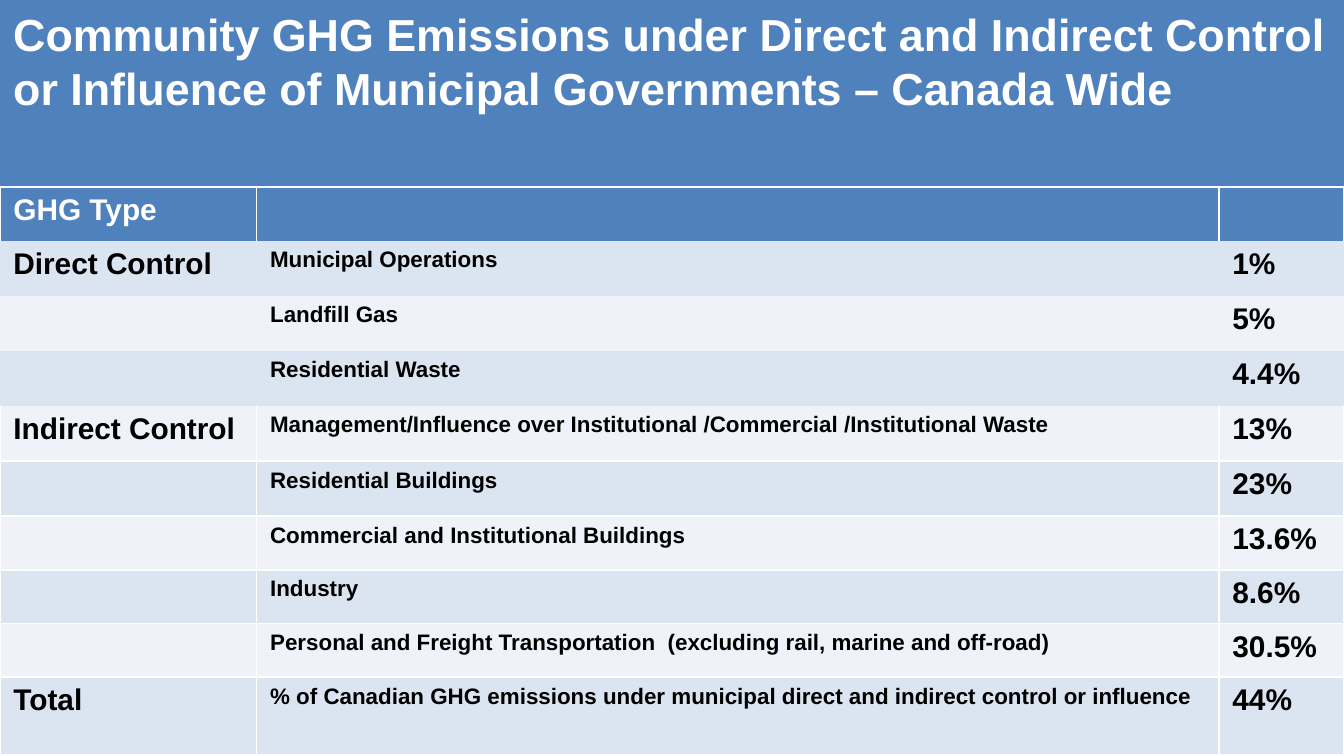
from dataclasses import dataclass

from lxml.etree import SubElement
from pptx import Presentation
from pptx.dml.color import RGBColor
from pptx.enum.shapes import MSO_SHAPE as Shape
from pptx.enum.text import MSO_ANCHOR as Anchor, PP_ALIGN as Align
from pptx.oxml.ns import qn
from pptx.util import Inches, Pt

WIDTH = 10
HEIGHT = WIDTH * 9 / 16
NO_GRID_STYLE = "{2D5ABB26-0587-4C30-8999-92F81FD0307C}"


@dataclass(frozen=True)
class Theme:
    font: str = "Arial"
    header: str = "4F81BD"
    bands: tuple = ("DBE5F1", "EFF3F9")
    light: str = "FFFFFF"
    dark: str = "000000"
    title_size: int = 24
    label_size: int = 16
    detail_size: int = 12
    border: int = 1


TITLE = ("Community GHG Emissions under Direct and Indirect Control "
         "or Influence of Municipal Governments – Canada Wide")
ROWS = [
    ("GHG Type", "", ""),
    ("Direct Control", "Municipal Operations", "1%"),
    ("", "Landfill Gas", "5%"),
    ("", "Residential Waste", "4.4%"),
    ("Indirect Control", "Management/Influence over Institutional /Commercial /Institutional Waste", "13%"),
    ("", "Residential Buildings", "23%"),
    ("", "Commercial and Institutional Buildings", "13.6%"),
    ("", "Industry", "8.6%"),
    ("", "Personal and Freight Transportation  (excluding rail, marine and off-road)", "30.5%"),
    ("Total", "% of Canadian GHG emissions under municipal direct and indirect control or influence", "44%"),
]
COLUMN_WIDTHS = [1.91, 7.16, 0.93]
ROW_HEIGHTS = [0.4] + [0.41] * 5 + [0.4] * 3 + [0.58]
# Cell sides with a border: header, direct control, first indirect row, the rest
ROW_BORDERS = ["LRT"] + [""] * 3 + ["LRB"] + ["LRTB"] * 5


def write(frame, text, font, size, color, bold=True):
    """Fill the first paragraph; an empty text only sets the height of its line."""
    paragraph = frame.paragraphs[0]
    if not text:
        SubElement(paragraph._p, qn("a:endParaRPr"), sz=str(size * 100))
        return
    paragraph.alignment = Align.LEFT
    run = paragraph.add_run()
    run.text = text
    run.font.name, run.font.size, run.font.bold = font, Pt(size), bold
    run.font.color.rgb = RGBColor.from_string(color)


def draw_borders(cell, sides, color, width):
    """Line the given sides, named in the schema's order L, R, T, B."""
    properties = cell._tc.get_or_add_tcPr()
    for side in sides:
        line = SubElement(properties, qn(f"a:ln{side}"), w=str(Pt(width)))
        fill = SubElement(line, qn("a:solidFill"))
        SubElement(fill, qn("a:srgbClr"), val=color)


class SlideBuilder:
    def __init__(self, slide, theme):
        self.slide, self.theme = slide, theme

    def place(self, left, top, width, height):
        """Turn shares of the slide's size into lengths."""
        return (Inches(left * WIDTH), Inches(top * HEIGHT),
                Inches(width * WIDTH), Inches(height * HEIGHT))

    def title_band(self, text, height):
        theme = self.theme
        band = self.slide.shapes.add_shape(Shape.RECTANGLE, *self.place(0, 0, 1, height))
        band.shadow.inherit = False
        band.fill.solid()
        band.fill.fore_color.rgb = RGBColor.from_string(theme.header)
        band.line.fill.background()
        frame = band.text_frame
        frame.word_wrap = True
        frame.vertical_anchor = Anchor.TOP
        write(frame, text, theme.font, theme.title_size, theme.light)

    def table(self, rows, top):
        theme = self.theme
        table = self.slide.shapes.add_table(
            len(rows), len(COLUMN_WIDTHS), *self.place(0, top, 1, 1 - top)).table
        table._tbl.tblPr.find(qn("a:tableStyleId")).text = NO_GRID_STYLE
        for column, width in zip(table.columns, COLUMN_WIDTHS):
            column.width = Inches(width)
        for index, (row, height) in enumerate(zip(table.rows, ROW_HEIGHTS)):
            row.height = Inches(height)
            fill = theme.bands[(index - 1) % 2] if index else theme.header
            color = theme.dark if index else theme.light
            for column, (cell, text) in enumerate(zip(row.cells, rows[index])):
                draw_borders(cell, ROW_BORDERS[index], theme.light, theme.border)
                cell.fill.solid()
                cell.fill.fore_color.rgb = RGBColor.from_string(fill)
                size = theme.detail_size if column == 1 else theme.label_size
                write(cell.text_frame, text, theme.font, size, color)


def main():
    presentation = Presentation()
    presentation.slide_width, presentation.slide_height = Inches(WIDTH), Inches(HEIGHT)
    slide = presentation.slides.add_slide(presentation.slide_layouts[6])
    builder = SlideBuilder(slide, Theme())
    builder.title_band(TITLE, height=1.4 / HEIGHT)
    builder.table(ROWS, top=1.39 / HEIGHT)
    presentation.save("out.pptx")


if __name__ == "__main__":
    main()
